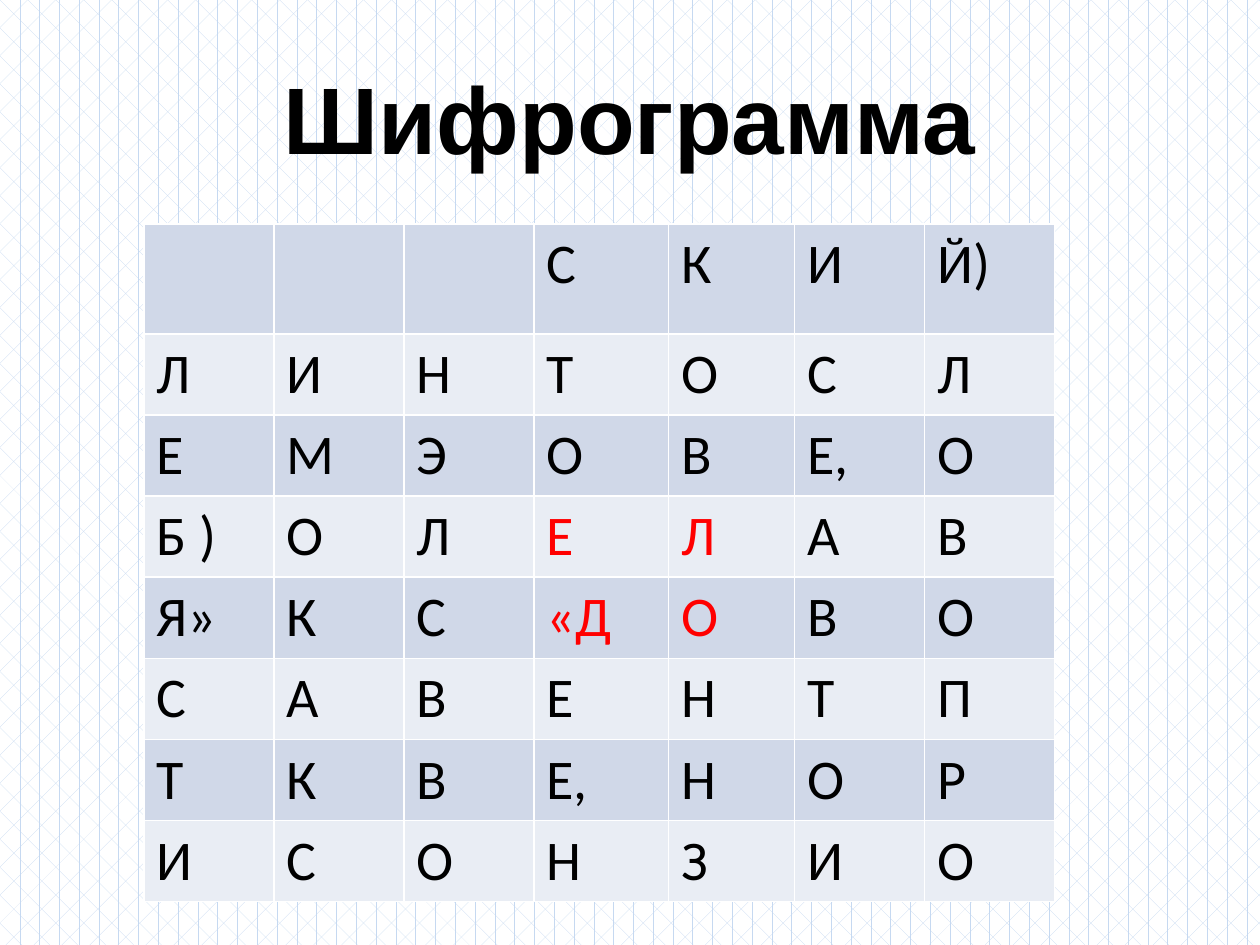
from lxml import etree
from pptx import Presentation
from pptx import util as u
from pptx.dml.color import RGBColor
from pptx.enum import dml, text
from pptx.oxml import ns

ROWS = [
    ["", "", "", "С", "К", "И", "Й)"],
    ["Л", "И", "Н", "Т", "О", "С", "Л"],
    ["Е", "М", "Э", "О", "В", "Е,", "О"],
    ["Б )", "О", "Л", "Е", "Л", "А", "В"],
    ["Я»", "К", "С", "«Д", "О", "В", "О"],
    ["С", "А", "В", "Е", "Н", "Т", "П"],
    ["Т", "К", "В", "Е,", "Н", "О", "Р"],
    ["И", "С", "О", "Н", "З", "И", "О"],
]
START_CELLS = {(3, 3), (3, 4), (4, 3), (4, 4)}
COLUMN_WIDTHS = [2.62, 2.62, 2.62, 2.72, 2.54, 2.62, 2.62]
HEADER_HEIGHT, ROW_HEIGHT = 2.21, 1.19
BAND_FILLS = ["D0D8E8", "E9EDF4"]


def color(hex_string):
    """Return the colour for a hex string."""
    return RGBColor.from_string(hex_string)


def set_font(paragraph, name, size, hex_string, bold=False):
    """Set the font of a whole paragraph."""
    font = paragraph.font
    font.name, font.size, font.bold = name, u.Pt(size), bold
    font.color.rgb = color(hex_string)


def set_borders(cell, hex_string, points):
    """Draw a solid line on all four sides of a cell."""
    properties = cell._tc.get_or_add_tcPr()
    for side in ("lnL", "lnR", "lnT", "lnB"):
        line = etree.SubElement(properties, ns.qn(f"a:{side}"), w=str(u.Pt(points)))
        fill = etree.SubElement(line, ns.qn("a:solidFill"))
        etree.SubElement(fill, ns.qn("a:srgbClr"), val=hex_string)


def paint_background(slide):
    """Fill the slide with a pale blue divot pattern."""
    fill = slide.background.fill
    fill.patterned()
    fill.pattern = dml.MSO_PATTERN.DIVOT
    fill.fore_color.rgb = color("C6D9F1")
    fill.back_color.rgb = color("FFFFFF")


def place_title(slide, left, top, width, height):
    """Place the heading in the title placeholder."""
    title = slide.shapes.title
    title.left, title.top = u.Cm(left), u.Cm(top)
    title.width, title.height = u.Cm(width), u.Cm(height)
    frame = title.text_frame
    frame.text = "Шифрограмма"
    frame.vertical_anchor = text.MSO_ANCHOR.MIDDLE
    paragraph = frame.paragraphs[0]
    paragraph.alignment = text.PP_ALIGN.CENTER
    set_font(paragraph, "Arial", 54, "000000", bold=True)


def place_cipher_table(slide, left, top, width, height):
    """Place the letter grid with its banded rows and red starting cells."""
    shape = slide.shapes.add_table(
        len(ROWS), len(COLUMN_WIDTHS), u.Cm(left), u.Cm(top), u.Cm(width), u.Cm(height)
    )
    table = shape.table
    for column, column_width in zip(table.columns, COLUMN_WIDTHS):
        column.width = u.Cm(column_width)
    for row_index, letters in enumerate(ROWS):
        table.rows[row_index].height = u.Cm(ROW_HEIGHT if row_index else HEADER_HEIGHT)
        for column_index, letter in enumerate(letters):
            cell = table.cell(row_index, column_index)
            set_borders(cell, "FFFFFF", 1)
            cell.fill.solid()
            cell.fill.fore_color.rgb = color(BAND_FILLS[row_index % 2])
            cell.text = letter
            is_start = (row_index, column_index) in START_CELLS
            set_font(cell.text_frame.paragraphs[0], "Calibri", 32, "FF0000" if is_start else "000000")
    shape.height = u.Cm(height)


def main():
    """Build and save the presentation."""
    presentation = Presentation()
    presentation.slide_width, presentation.slide_height = u.Cm(25.4), u.Cm(19.05)
    slide = presentation.slides.add_slide(presentation.slide_layouts[5])
    paint_background(slide)
    place_title(slide, 1.27, 0.76, 22.86, 3.18)
    place_cipher_table(slide, 2.9, 4.52, sum(COLUMN_WIDTHS), 13.46)
    presentation.save("out.pptx")


if __name__ == "__main__":
    main()
